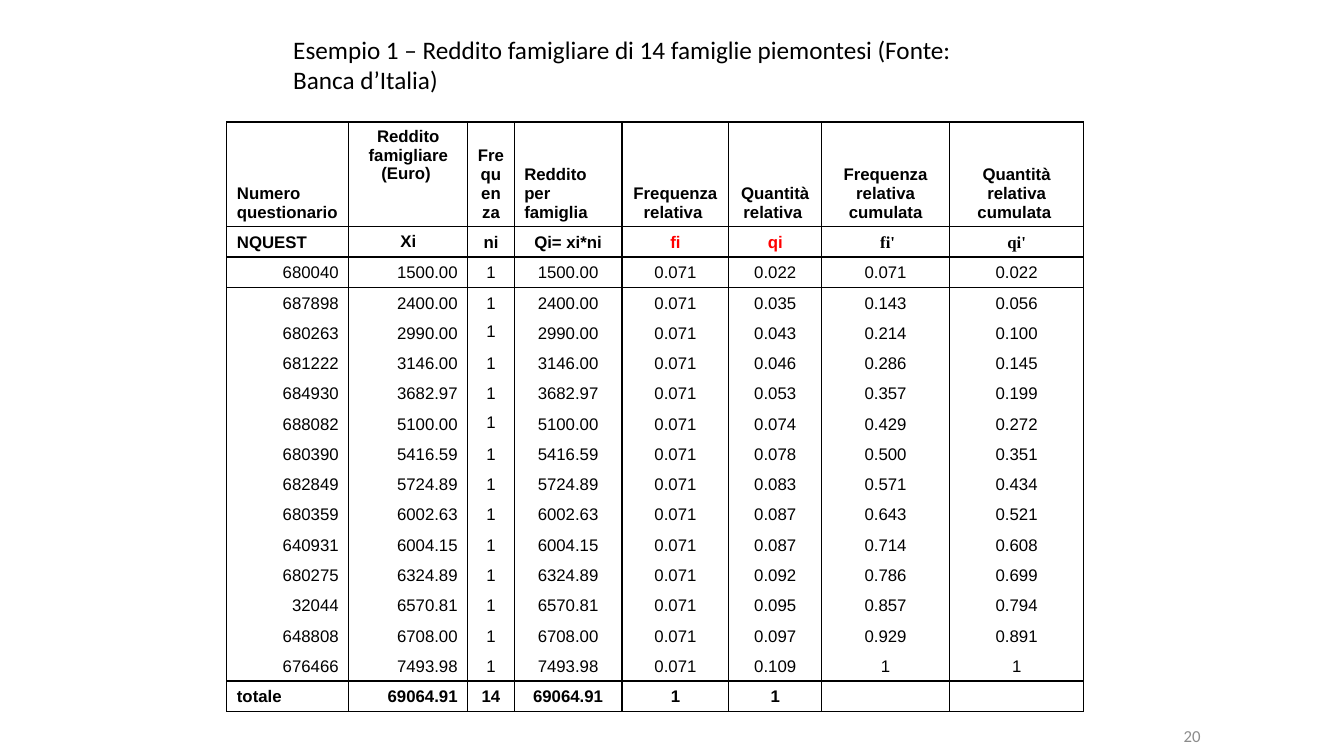
from lxml import etree
from pptx import Presentation
from pptx import util as u
from pptx.dml.color import RGBColor
from pptx.enum import text
from pptx.oxml import ns

LEFT, MID, RIGHT = text.PP_ALIGN.LEFT, text.PP_ALIGN.CENTER, text.PP_ALIGN.RIGHT
TOP, BASE = text.MSO_ANCHOR.TOP, text.MSO_ANCHOR.BOTTOM
BLACK, RED, GREY = "000000", "FF0000", "8C8C8C"
PLAIN = "{2D5ABB26-0587-4C30-8999-92F81FD0307C}"  # table style without grid

COLS = [1.21, 1.18, 0.46, 1.07, 1.06, 0.92, 1.27, 1.33]
HEADS = ["Numero questionario", "Reddito famigliare (Euro) ", "Frequenza",
         "Reddito per famiglia", "Frequenza relativa ", "Quantità relativa ",
         "Frequenza relativa cumulata", "Quantità relativa cumulata "]
SIGNS = ["NQUEST", "Xi", "ni", "Qi= xi*ni", "fi", "qi", " fi'", "qi'"]
# Questionnaire, income, relative quantity, cumulated frequency and quantity
DATA = [
    ("680040", "1500.00", "0.022", "0.071", "0.022"),
    ("687898", "2400.00", "0.035", "0.143", "0.056"),
    ("680263", "2990.00", "0.043", "0.214", "0.100"),
    ("681222", "3146.00", "0.046", "0.286", "0.145"),
    ("684930", "3682.97", "0.053", "0.357", "0.199"),
    ("688082", "5100.00", "0.074", "0.429", "0.272"),
    ("680390", "5416.59", "0.078", "0.500", "0.351"),
    ("682849", "5724.89", "0.083", "0.571", "0.434"),
    ("680359", "6002.63", "0.087", "0.643", "0.521"),
    ("640931", "6004.15", "0.087", "0.714", "0.608"),
    ("680275", "6324.89", "0.092", "0.786", "0.699"),
    ("32044", "6570.81", "0.095", "0.857", "0.794"),
    ("648808", "6708.00", "0.097", "0.929", "0.891"),
    ("676466", "7493.98", "0.109", "1", "1"),
]
TOTAL = ["totale", "69064.91", "14", "69064.91", "1", "1", "", ""]
BODY = [[n, x, "1", x, "0.071", q, cf, cq] for n, x, q, cf, cq in DATA]
ROWS = [[""] * 8, HEADS, SIGNS] + BODY + [TOTAL]
LAST = len(ROWS) - 1
HIGH = {(1, 1), (2, 1), (5, 2), (8, 2)}  # cells set at the top


def paint(value):
    return RGBColor.from_string(value)


def write(par, words, size, face, color=BLACK, bold=False, align=LEFT):
    par.alignment = align
    run = par.add_run()
    run.text = words
    font = run.font
    font.size, font.name, font.bold = u.Pt(size), face, bold
    font.color.rgb = paint(color)


def label(slide, box, words, size, color, align=LEFT):
    frame = slide.shapes.add_textbox(*map(u.Inches, box)).text_frame
    frame.word_wrap = True
    frame.vertical_anchor = text.MSO_ANCHOR.MIDDLE
    write(frame.paragraphs[0], words, size, "Calibri", color, align=align)


def edge(cell, sides):
    props = cell._tc.get_or_add_tcPr()
    for spot, side in enumerate(sides):
        line = etree.Element(ns.qn("a:ln" + side), w=str(u.Pt(1)))
        fill = etree.SubElement(line, ns.qn("a:solidFill"))
        etree.SubElement(fill, ns.qn("a:srgbClr"), val=BLACK)
        props.insert(spot, line)


def sides_of(row):
    if row == 0:
        return "B"
    if row in (1, 2, LAST):
        return "LRTB"
    return "LR" + {3: "T", LAST - 1: "B"}.get(row, "")


def align_of(row, col):
    if row in (1, 2) or row == LAST and col == 0:
        return LEFT if col == 0 or (row, col) == (1, 3) else MID
    return RIGHT if col < 2 else MID


def fill_cell(cell, row, col, words):
    cell.fill.background()
    edge(cell, sides_of(row))
    cell.vertical_anchor = TOP if (row, col) in HIGH else BASE
    par = cell.text_frame.paragraphs[0]
    if not words:
        par._p.get_or_add_endParaRPr().set("sz", "1200")
        return
    sign = row == 2
    face = "Times New Roman" if sign and col > 5 else "Arial"
    color = RED if sign and col in (4, 5) else BLACK
    write(par, words, 12, face, color, row in (1, 2, LAST), align_of(row, col))
    if row > 1:  # hanging indent
        props = par._p.get_or_add_pPr()
        props.set("marL", str(u.Inches(0.38)))
        props.set("indent", str(u.Inches(-0.38)))


def income_table(slide, box):
    frame = slide.shapes.add_table(len(ROWS), len(COLS), *map(u.Inches, box))
    grid = frame.table
    grid.first_row = grid.horz_banding = False
    grid._tbl.tblPr.find(ns.qn("a:tableStyleId")).text = PLAIN
    for col, width in enumerate(COLS):
        grid.columns[col].width = u.Inches(width)
    for row, line in enumerate(ROWS):
        grid.rows[row].height = u.Inches({0: 0.54, 1: 1.04}.get(row, 0.3))
        for col, words in enumerate(line):
            fill_cell(grid.cell(row, col), row, col, words)


def main():
    deck = Presentation()
    deck.slide_width, deck.slide_height = u.Inches(13.33), u.Inches(7.5)
    slide = deck.slides.add_slide(deck.slide_layouts[6])
    # Page number
    label(slide, (10.31, 7.1, 3.03, 0.4), "20", 12, GREY, MID)
    # Title
    label(slide, (2.81, 0.29, 7.32, 0.7),
          "Esempio 1 – Reddito famigliare di 14 famiglie piemontesi "
          "(Fonte: Banca d’Italia)", 18, BLACK)
    # Income table
    income_table(slide, (2.25, 0.67, 8.5, 6.41))
    deck.save("out.pptx")


if __name__ == "__main__":
    main()
